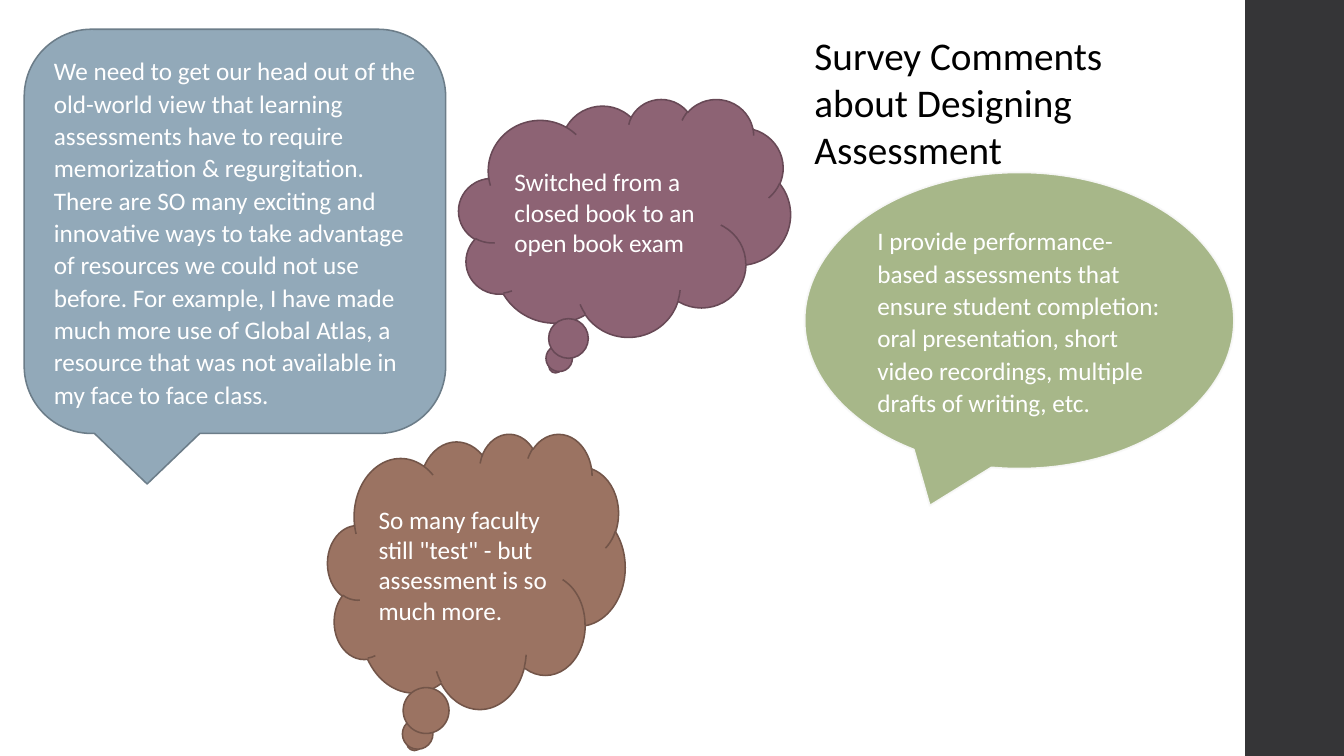
import pptx
import pptx.util
import pptx.dml.color
import pptx.enum.shapes
import pptx.enum.text
import lxml.etree

Inches = pptx.util.Inches
Pt = pptx.util.Pt
RGBColor = pptx.dml.color.RGBColor
SHAPES = pptx.enum.shapes.MSO_SHAPE

CHARCOAL = RGBColor(0x35, 0x35, 0x37)
PLUM = RGBColor(0x8D, 0x63, 0x74)
PLUM_EDGE = RGBColor(0x68, 0x49, 0x56)
GREEN = RGBColor(0xA7, 0xB7, 0x89)
GREEN_EDGE = RGBColor(0xF9, 0xF9, 0xF9)
BLUE = RGBColor(0x92, 0xA9, 0xB9)
BLUE_EDGE = RGBColor(0x6C, 0x7D, 0x89)
BROWN = RGBColor(0x9B, 0x73, 0x62)
BROWN_EDGE = RGBColor(0x73, 0x55, 0x49)
WHITE = RGBColor(0xFF, 0xFF, 0xFF)
BLACK = RGBColor(0x00, 0x00, 0x00)

PLAIN = {"alignment": pptx.enum.text.PP_ALIGN.LEFT}
SPACED = {**PLAIN, "line_spacing": 1.07, "space_after": Pt(8)}


def write_text(shape, text, size, color, paragraph_format):
    shape.text_frame.word_wrap = True
    paragraph = shape.text_frame.paragraphs[0]
    paragraph.text = text
    for name, value in paragraph_format.items():
        setattr(paragraph, name, value)
    for name, value in {"name": "Calibri", "size": Pt(size)}.items():
        setattr(paragraph.font, name, value)
    paragraph.font.color.rgb = color


def add_filled_shape(kind, place, fill):
    shape = slide.shapes.add_shape(kind, *map(Inches, place))
    shape.shadow.inherit = False
    shape.fill.solid()
    shape.fill.fore_color.rgb = fill
    return shape


presentation = pptx.Presentation()
presentation.slide_width = Inches(13.33)
presentation.slide_height = Inches(7.5)
slide = presentation.slides.add_slide(presentation.slide_layouts[6])

side_band = add_filled_shape(SHAPES.RECTANGLE, (12.35, 0, 1, 7.5), CHARCOAL)
side_band.line.fill.background()

comments = [
    (SHAPES.CLOUD_CALLOUT, (4.55, 0.98, 3.29, 2.36), PLUM, PLUM_EDGE, 1.1, 100, PLAIN,
     "Switched from a closed book to an open book exam"),
    (SHAPES.OVAL_CALLOUT, (7.98, 1.71, 4.26, 2.94), GREEN, GREEN_EDGE, 1.35, 95, SPACED,
     "I provide performance-based assessments that ensure student completion: "
     "oral presentation, short video recordings, multiple drafts of writing, etc."),
    (SHAPES.ROUNDED_RECTANGULAR_CALLOUT, (0.24, 0.29, 4.18, 4.01), BLUE, BLUE_EDGE, 1.1, 100, SPACED,
     "We need to get our head out of the old-world view that learning assessments "
     "have to require memorization & regurgitation. There are SO many exciting and "
     "innovative ways to take advantage of resources we could not use before. "
     "For example, I have made much more use of Global Atlas, a resource that was "
     "not available in my face to face class."),
    (SHAPES.CLOUD_CALLOUT, (3.25, 4.3, 2.95, 2.73), BROWN, BROWN_EDGE, 1.1, 100, PLAIN,
     'So many faculty still "test" - but assessment is so much more.'),
]
for kind, place, fill, edge, width, opacity, paragraph_format, text in comments:
    callout = add_filled_shape(kind, place, fill)
    callout.line.color.rgb = edge
    callout.line.width = Pt(width)
    if opacity < 100:
        edge_color = callout.line._get_or_add_ln().find(".//" + pptx.oxml.ns.qn("a:srgbClr"))
        lxml.etree.SubElement(edge_color, pptx.oxml.ns.qn("a:alpha"), val=str(opacity * 1000))
    callout.text_frame.vertical_anchor = pptx.enum.text.MSO_ANCHOR.MIDDLE
    write_text(callout, text, 18, WHITE, paragraph_format)

title = slide.shapes.add_textbox(*map(Inches, (7.98, 0.26, 3.93, 1.51)))
title.text_frame.auto_size = pptx.enum.text.MSO_AUTO_SIZE.SHAPE_TO_FIT_TEXT
write_text(title, "Survey Comments about Designing Assessment", 28, BLACK, PLAIN)

presentation.save("out.pptx")
